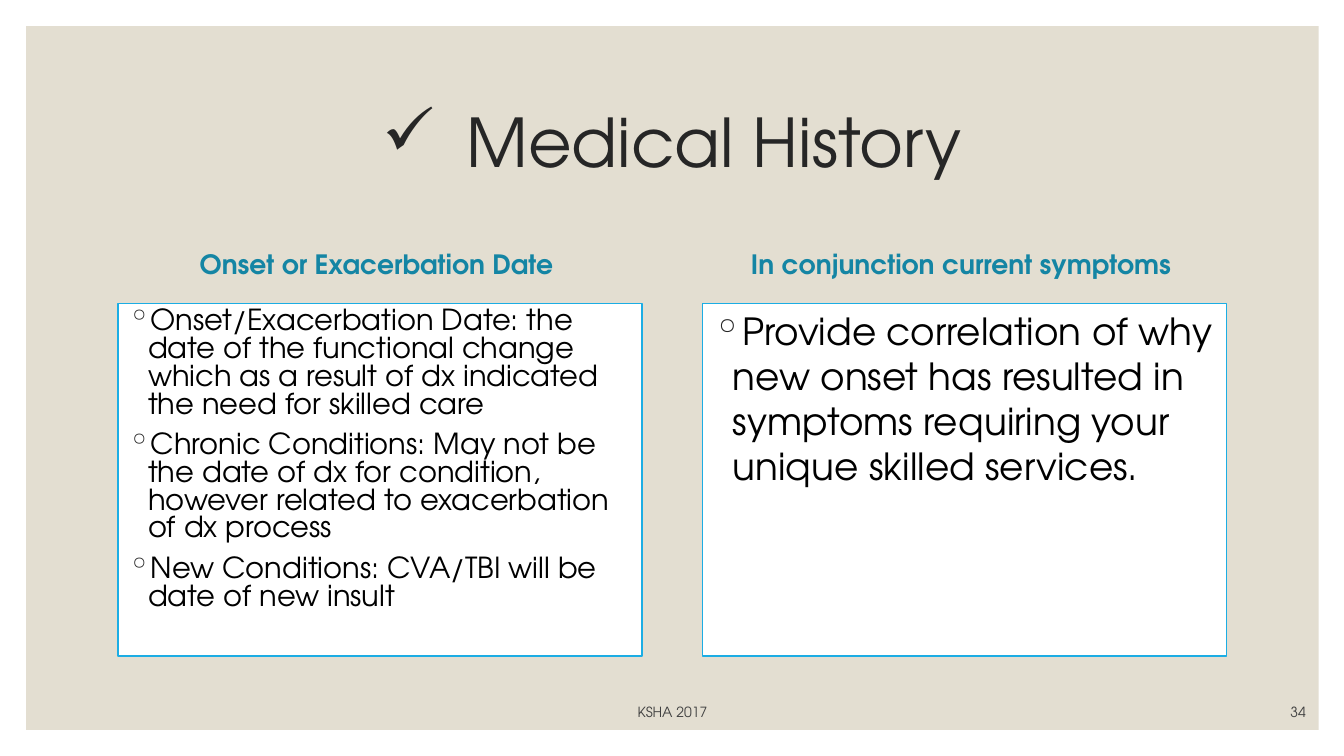
from dataclasses import dataclass
from typing import Optional

from lxml import etree
from pptx import Presentation
from pptx import util as u
from pptx.dml.color import RGBColor
from pptx.enum import shapes, text
from pptx.oxml import ns

SLIDE_WIDTH, SLIDE_HEIGHT = u.Inches(13.33), u.Inches(7.5)
FONT = "TeX Gyre Adventor"
WHITE = RGBColor(0xFF, 0xFF, 0xFF)
SAND = RGBColor(0xE3, 0xDE, 0xD1)
CHARCOAL = RGBColor(0x26, 0x26, 0x26)
GREY = RGBColor(0x40, 0x40, 0x40)
TEAL = RGBColor(0x14, 0x85, 0xA4)
SKY = RGBColor(0x1C, 0xAD, 0xE4)
BLACK = RGBColor(0, 0, 0)

CENTER, LEFT, RIGHT = text.PP_ALIGN.CENTER, text.PP_ALIGN.LEFT, text.PP_ALIGN.RIGHT
TOP, MIDDLE, BOTTOM = text.MSO_ANCHOR.TOP, text.MSO_ANCHOR.MIDDLE, text.MSO_ANCHOR.BOTTOM

MARGIN, COLUMN_WIDTH, COLUMN_STEP = 8.78, 39, 43.5


@dataclass(frozen=True)
class Area:
    """Left, top, width and height as percentages of the slide."""
    left: float
    top: float
    width: float
    height: float

    def lengths(self) -> tuple[int, int, int, int]:
        return (int(SLIDE_WIDTH * self.left / 100), int(SLIDE_HEIGHT * self.top / 100),
                int(SLIDE_WIDTH * self.width / 100), int(SLIDE_HEIGHT * self.height / 100))


@dataclass(frozen=True)
class Style:
    size: float
    color: RGBColor
    align: text.PP_ALIGN = CENTER
    anchor: text.MSO_ANCHOR = MIDDLE
    bold: bool = False
    bullet: str = ""
    indent: float = 0
    line_spacing: float = 1.0
    space_before: float = 0


@dataclass(frozen=True)
class Topic:
    heading: str
    points: tuple[str, ...]
    size: float
    line_spacing: float


TOPICS = (
    Topic("Onset or Exacerbation Date ", (
        "Onset/Exacerbation Date: the date of the functional change which as a result "
        "of dx indicated the need for skilled care",
        "Chronic Conditions: May not be the date of dx for condition, however related "
        "to exacerbation of dx process",
        "New Conditions: CVA/TBI will be date of new insult",
    ), 20.7, 0.8),
    Topic("In conjunction current symptoms ", (
        "Provide correlation of why new onset has resulted in symptoms requiring your "
        "unique skilled services.",
    ), 26.7, 1.0),
)


def add_bullet(para, style: Style) -> None:
    properties = para._p.get_or_add_pPr()
    properties.set("marL", str(u.Inches(style.indent)))
    properties.set("indent", str(-u.Inches(style.indent)))
    color = etree.SubElement(properties, ns.qn("a:buClr"))
    etree.SubElement(color, ns.qn("a:srgbClr"), val=str(CHARCOAL))
    etree.SubElement(properties, ns.qn("a:buChar"), char=style.bullet)


def add_rectangle(page, area: Area, fill: RGBColor, line: Optional[RGBColor] = None):
    box = page.shapes.add_shape(shapes.MSO_SHAPE.RECTANGLE, *area.lengths())
    box.shadow.inherit = False
    box.fill.solid()
    box.fill.fore_color.rgb = fill
    if line is None:
        box.line.fill.background()
    else:
        box.line.color.rgb = line
        box.line.width = u.Pt(1)
    return box


def write(box, lines: tuple[str, ...], style: Style) -> None:
    frame = box.text_frame
    frame.word_wrap = True
    frame.vertical_anchor = style.anchor
    for index, line in enumerate(lines):
        para = frame.add_paragraph() if index else frame.paragraphs[0]
        para.alignment = style.align
        para.line_spacing = style.line_spacing
        para.space_before = u.Pt(style.space_before)
        if style.bullet:
            add_bullet(para, style)
        span = para.add_run()
        span.text = line
        span.font.name = FONT
        span.font.size = u.Pt(style.size)
        span.font.bold = style.bold
        span.font.color.rgb = style.color


def add_label(page, area: Area, line: str, style: Style) -> None:
    write(page.shapes.add_textbox(*area.lengths()), (line,), style)


def add_topic(page, column: int, topic: Topic) -> None:
    left = MARGIN + column * COLUMN_STEP
    add_label(page, Area(left, 30.27, COLUMN_WIDTH, 9.33), topic.heading,
              Style(19, TEAL, bold=True))
    panel = add_rectangle(page, Area(left, 40.13, COLUMN_WIDTH, 46.67), WHITE, SKY)
    write(panel, topic.points,
          Style(topic.size, BLACK, LEFT, TOP, bullet="◦", indent=0.2,
                line_spacing=topic.line_spacing, space_before=9))


def main() -> None:
    deck = Presentation()
    deck.slide_width, deck.slide_height = SLIDE_WIDTH, SLIDE_HEIGHT
    page = deck.slides.add_slide(deck.slide_layouts[6])
    add_rectangle(page, Area(1.95, 3.47, 96.17, 93.07), SAND)
    add_label(page, Area(MARGIN, 9.33, COLUMN_STEP + COLUMN_WIDTH, 20), "Medical History",
              Style(48, CHARCOAL, bullet="✓", indent=0.83, line_spacing=0.9))
    for column, topic in enumerate(TOPICS):
        add_topic(page, column, topic)
    add_label(page, Area(28.66, 92, 42.76, 4), "KSHA 2017", Style(10, GREY, anchor=BOTTOM))
    add_label(page, Area(85.9, 92, 12, 4), "34", Style(10, GREY, RIGHT, BOTTOM))
    deck.save("out.pptx")


if __name__ == "__main__":
    main()
